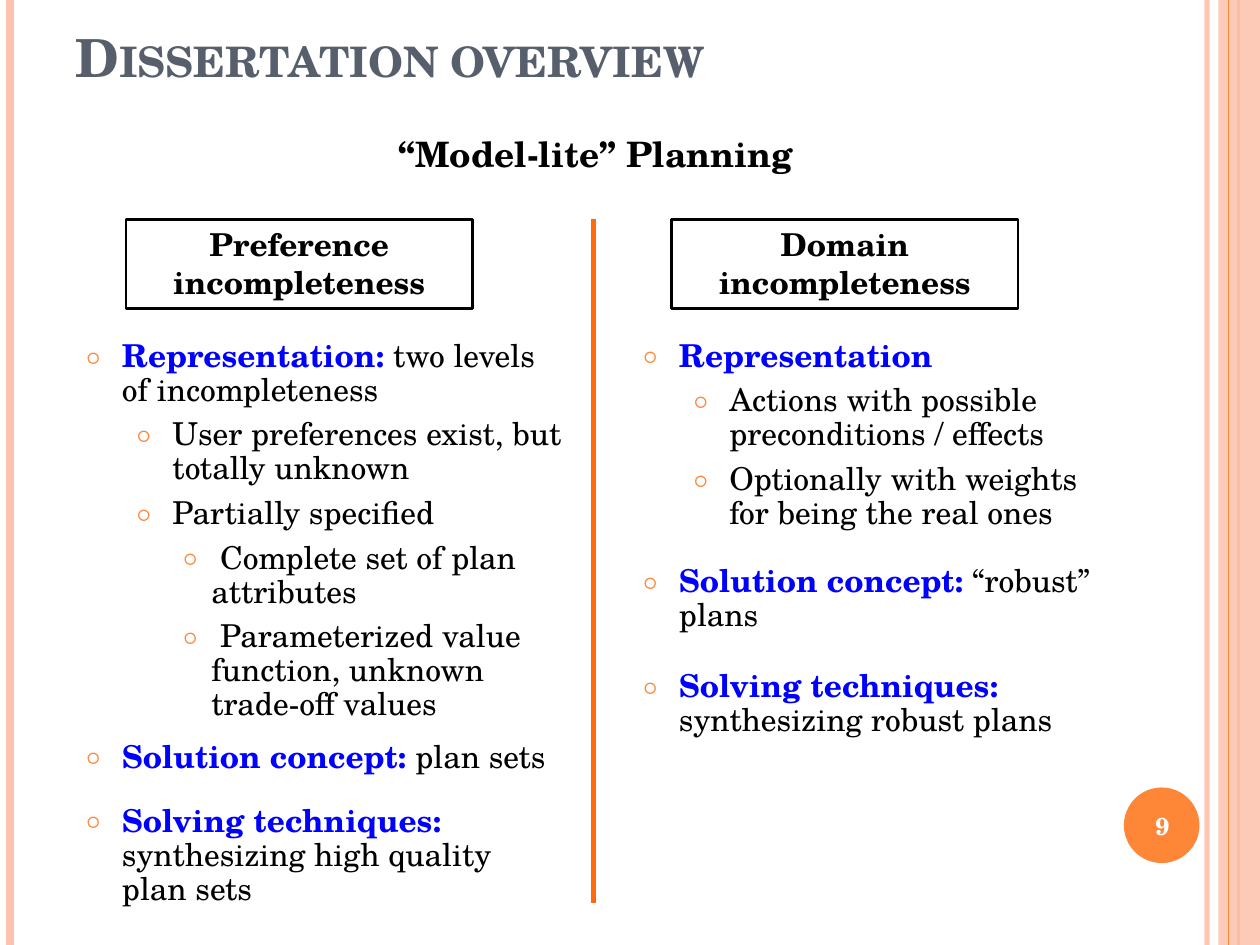
from lxml.etree import SubElement
from pptx import Presentation
from pptx.dml.color import RGBColor
from pptx.enum.shapes import MSO_CONNECTOR, MSO_SHAPE
from pptx.enum.text import MSO_ANCHOR, MSO_AUTO_SIZE, PP_ALIGN
from pptx.oxml.ns import qn
from pptx.util import Inches, Pt

FONT = "TeX Gyre Schola"
BLACK = RGBColor(0, 0, 0)
WHITE = RGBColor(0xFF, 0xFF, 0xFF)
BLUE = RGBColor(0, 0, 0xFF)
SLATE = RGBColor(0x57, 0x5F, 0x6D)
ORANGE = RGBColor(0xFE, 0x86, 0x37)
DEEP = RGBColor(0xFF, 0x6B, 0x0A)
PEACH = RGBColor(0xFE, 0xC3, 0xAE)
INDENTS = [(0.29, 0.29), (0.69, 0.29), (1, 0.23)]

LEFT = [
    (2.65, 2.92, [
        (0, "Representation:", " two levels of incompleteness"),
        (1, "", "User preferences exist, but totally unknown"),
        (1, "", "Partially specified"),
        (2, "", " Complete set of plan attributes"),
        (2, "", " Parameterized value function, unknown trade-off values"),
    ]),
    (5.83, 0.51, [(0, "Solution concept: ", "plan sets")]),
    (6.34, 0.74, [(0, "Solving techniques: ", "synthesizing high quality plan sets")]),
]
RIGHT = [
    (2.65, 1.8, [
        (0, "Representation", ""),
        (1, "", "Actions with possible preconditions / effects"),
        (1, "", "Optionally with weights for being the real ones"),
    ]),
    (4.44, 0.73, [(0, "Solution concept: ", "“robust” plans")]),
    (5.27, 0.73, [(0, "Solving techniques:", " synthesizing robust plans")]),
]


def place(box):
    """Turn a box in inches into lengths."""
    return [Inches(n) for n in box]


def style(font, size, color, bold=True):
    """Set the face, size, colour and weight of a font."""
    font.name = FONT
    font.size = Pt(size)
    font.color.rgb = color
    font.bold = bold


def fade(fill, alpha):
    """Make a solid fill or line partly transparent, alpha in percent."""
    color = fill.find(".//" + qn("a:srgbClr"))
    SubElement(color, qn("a:alpha"), val=str(alpha * 1000))


def add_rule(slide, x, top, end, color, width, alpha=100):
    """Draw one upright line."""
    line = slide.shapes.add_connector(
        MSO_CONNECTOR.STRAIGHT, *place((x, top, x, end)))
    line.line.color.rgb = color
    line.line.width = Pt(width)
    props = line._element.spPr
    if alpha < 100:
        fade(props, alpha)
    SubElement(props, qn("a:effectLst"))


def add_shape(slide, kind, box, fill):
    """Add a plain filled shape without outline."""
    shape = slide.shapes.add_shape(kind, *place(box))
    shape.shadow.inherit = False
    shape.fill.solid()
    shape.fill.fore_color.rgb = fill
    shape.line.fill.background()
    return shape


def write(frame, text, size, color):
    """Write one bold centred paragraph."""
    frame.word_wrap = True
    para = frame.paragraphs[0]
    para.text = text
    para.alignment = PP_ALIGN.CENTER
    style(para.font, size, color)


def add_edges(slide):
    """Draw the stripes down both sides of the slide."""
    add_rule(slide, 9.58, 0, 7.5, PEACH, 3, 93)
    add_rule(slide, 0.08, 0, 7.5, PEACH, 4.5)
    add_rule(slide, 9.83, 0, 7.5, ORANGE, 1.5)
    band = add_shape(slide, MSO_SHAPE.RECTANGLE, (9.67, 0, 0.33, 7.5), PEACH)
    fade(band._element.spPr, 87)
    add_rule(slide, 9.75, 0, 7.5, ORANGE, 0.75)


def add_badge(slide, box, number):
    """Add the round page number."""
    add_shape(slide, MSO_SHAPE.OVAL, box, ORANGE)
    left, top, width, height = box
    label = slide.shapes.add_textbox(
        *place((left - 0.03, top + 0.02, width + 0.07, height - 0.03)))
    label.text_frame.vertical_anchor = MSO_ANCHOR.MIDDLE
    write(label.text_frame, number, 14, WHITE)


def set_title(slide, box, text):
    """Place and format the title in small capitals."""
    title = slide.shapes.title
    title.left, title.top, title.width, title.height = place(box)
    frame = title.text_frame
    frame.vertical_anchor = MSO_ANCHOR.BOTTOM
    frame.auto_size = MSO_AUTO_SIZE.NONE
    para = frame.paragraphs[0]
    para.alignment = PP_ALIGN.LEFT
    run = para.add_run()
    run.text = text
    style(run.font, 30, SLATE)
    run._r.get_or_add_rPr().set("cap", "small")


def add_topic(slide, box, text):
    """Add the heading above both columns."""
    topic = slide.shapes.add_textbox(*place(box))
    write(topic.text_frame, text, 20, BLACK)
    topic.text_frame.auto_size = MSO_AUTO_SIZE.SHAPE_TO_FIT_TEXT


def add_head(slide, box, text):
    """Add the outlined heading of a column."""
    head = add_shape(slide, MSO_SHAPE.RECTANGLE, box, WHITE)
    head.fill.background()
    head.line.color.rgb = BLACK
    head.line.width = Pt(1.5)
    write(head.text_frame, text, 18, BLACK)
    head.text_frame.auto_size = MSO_AUTO_SIZE.SHAPE_TO_FIT_TEXT
    head.text_frame.vertical_anchor = MSO_ANCHOR.TOP


def add_bullet(para, level):
    """Give a paragraph its ring bullet and hanging indent."""
    margin, hang = INDENTS[level]
    para.level = level
    para.line_spacing = 0.9
    para.space_before = Pt(6)
    props = para._p.get_or_add_pPr()
    props.set("marL", str(Inches(margin)))
    props.set("indent", str(-Inches(hang)))
    color = SubElement(props, qn("a:buClr"))
    SubElement(color, qn("a:srgbClr"), val=str(ORANGE))
    SubElement(props, qn("a:buSzPct"), val="70000")
    SubElement(props, qn("a:buFont"), typeface=FONT)
    SubElement(props, qn("a:buChar"), char="○")


def add_list(slide, box, items):
    """Add a bulleted list with blue lead words."""
    frame = slide.shapes.add_textbox(*place(box)).text_frame
    frame.word_wrap = True
    for i, (level, lead, rest) in enumerate(items):
        para = frame.add_paragraph() if i else frame.paragraphs[0]
        add_bullet(para, level)
        for text, color, bold in ((lead, BLUE, True), (rest, BLACK, False)):
            if text:
                run = para.add_run()
                run.text = text
                style(run.font, 18, color, bold)


def add_column(slide, left, width, lists):
    """Stack the lists of one column."""
    for top, height, items in lists:
        add_list(slide, (left, top, width, height), items)


def main():
    """Build and save the slide."""
    deck = Presentation()
    deck.slide_width, deck.slide_height = Inches(10), Inches(7.5)
    slide = deck.slides.add_slide(deck.slide_layouts[5])
    add_edges(slide)
    add_badge(slide, (8.92, 6.25, 0.6, 0.6), "9")
    set_title(slide, (0.5, 0.08, 8.17, 0.67), "Dissertation overview")
    add_topic(slide, (2.92, 1, 3.62, 0.44), "“Model-lite” Planning")
    add_head(slide, (1, 1.74, 2.75, 0.71), "Preference incompleteness")
    add_head(slide, (5.33, 1.74, 2.75, 0.71), "Domain incompleteness")
    add_column(slide, 0.58, 4, LEFT)
    add_rule(slide, 4.71, 1.74, 7.17, DEEP, 3)
    add_column(slide, 5, 3.92, RIGHT)
    deck.save("out.pptx")


if __name__ == "__main__":
    main()
